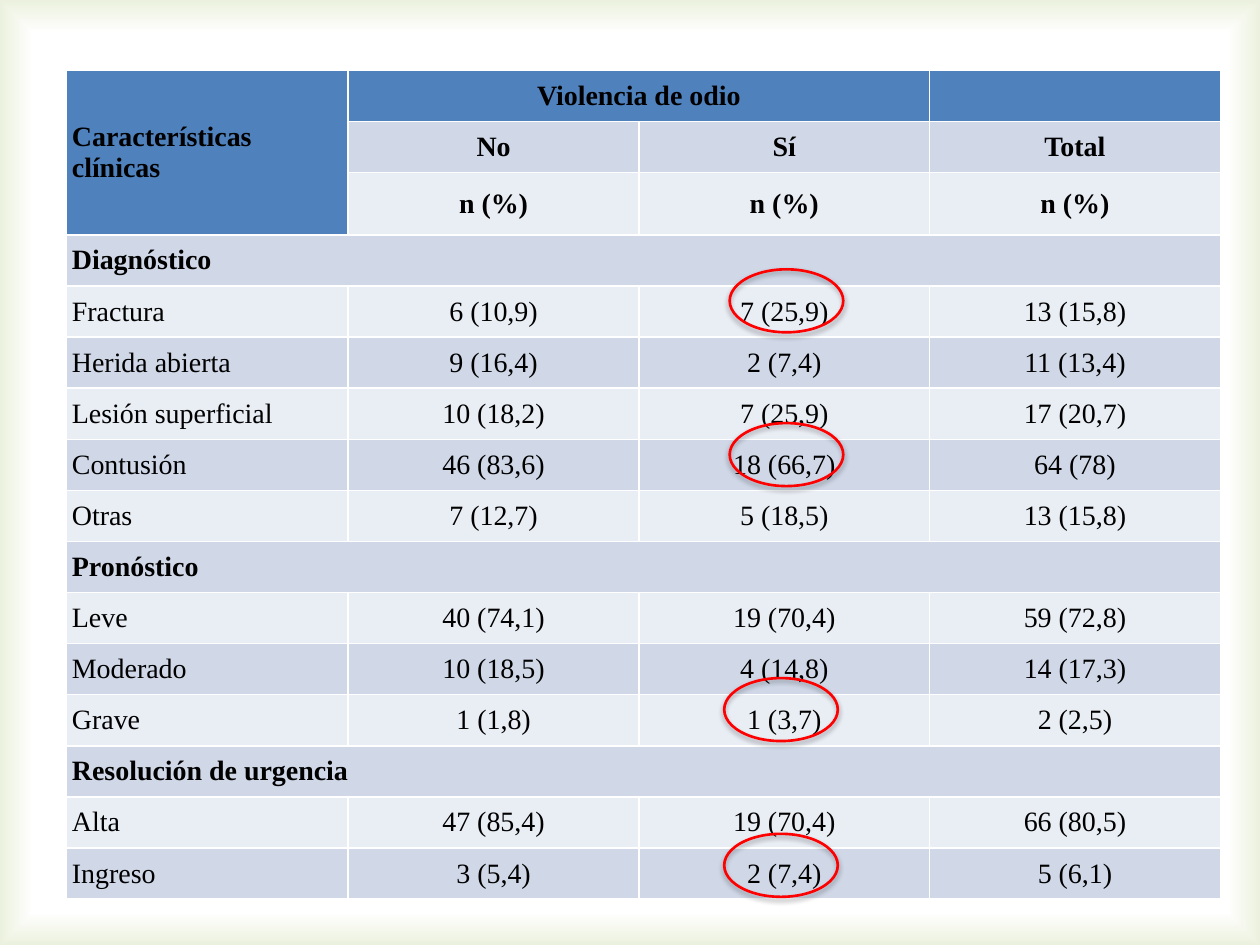
from dataclasses import dataclass

from lxml import etree
from pptx import Presentation
from pptx.dml.color import RGBColor
from pptx.enum import shapes, text
from pptx.oxml import parse_xml
from pptx.oxml.ns import nsdecls, qn
from pptx.util import Cm, Pt


@dataclass(frozen=True)
class Theme:
    font: str = "Times New Roman"
    size: int = 16
    ink: str = "000000"
    header: str = "4F81BD"
    band_dark: str = "D0D8E8"
    band_light: str = "E9EDF4"
    mark: str = "FF0000"
    mark_width: float = 1.5
    page_center: str = "FFFFFF"
    page_edge: str = "EBF1DE"


THEME = Theme()

HEADER_ROWS = 3
ROWS = [
    ("Características clínicas", "Violencia de odio", "", ""),
    ("", "No", "Sí", "Total"),
    ("", "n (%)", "n (%)", "n (%)"),
    ("Diagnóstico",),
    ("Fractura", "6 (10,9)", "7 (25,9)", "13 (15,8)"),
    ("Herida abierta", "9 (16,4)", "2 (7,4)", "11 (13,4)"),
    ("Lesión superficial", "10 (18,2)", "7 (25,9)", "17 (20,7)"),
    ("Contusión", "46 (83,6)", "18 (66,7)", "64 (78)"),
    ("Otras", "7 (12,7)", "5 (18,5)", "13 (15,8)"),
    ("Pronóstico",),
    ("Leve", "40 (74,1)", "19 (70,4)", "59 (72,8)"),
    ("Moderado", "10 (18,5)", "4 (14,8)", "14 (17,3)"),
    ("Grave", "1 (1,8)", "1 (3,7)", "2 (2,5)"),
    ("Resolución de urgencia",),
    ("Alta", "47 (85,4)", "19 (70,4)", "66 (80,5)"),
    ("Ingreso", "3 (5,4)", "2 (7,4)", "5 (6,1)"),
]
COLUMN_WIDTHS = [5.69, 5.86, 5.86, 5.86]
ROW_HEIGHT = 1.03

# Offsets of the highlight ellipses from the table's top left corner, in cm
MARKS = [(13.38, 7.11), (13.38, 4.01), (13.27, 12.25), (13.27, 15.39)]
MARK_SIZE = (2.29, 1.27)


def paint_background(page):
    """White page whose edges fade to pale green."""
    page.background.fill.gradient()
    gradient = page.background._cSld.find(".//" + qn("a:gradFill"))
    gradient.getparent().replace(gradient, parse_xml(
        f'<a:gradFill {nsdecls("a")} rotWithShape="1"><a:gsLst>'
        f'<a:gs pos="93000"><a:srgbClr val="{THEME.page_center}">'
        '<a:alpha val="70000"/></a:srgbClr></a:gs>'
        f'<a:gs pos="100000"><a:srgbClr val="{THEME.page_edge}"/></a:gs>'
        '</a:gsLst><a:path path="rect"><a:fillToRect l="50000" t="50000" '
        'r="50000" b="50000"/></a:path></a:gradFill>'))


def fill_cell(cell, words, color, bold, centered):
    cell.fill.solid()
    cell.fill.fore_color.rgb = RGBColor.from_string(color)
    cell.vertical_anchor = text.MSO_ANCHOR.MIDDLE
    cell.margin_left = cell.margin_right = Cm(0.12)
    cell.margin_top = cell.margin_bottom = 0
    cell.text = words
    para = cell.text_frame.paragraphs[0]
    para.alignment = text.PP_ALIGN.CENTER if centered else text.PP_ALIGN.LEFT
    para.font.name = THEME.font
    para.font.size = Pt(THEME.size)
    para.font.bold = bold
    para.font.color.rgb = RGBColor.from_string(THEME.ink)


def add_clinical_table(page, left, top):
    frame = page.shapes.add_table(
        len(ROWS), len(COLUMN_WIDTHS), Cm(left), Cm(top),
        Cm(sum(COLUMN_WIDTHS)), Cm(ROW_HEIGHT * len(ROWS)))
    table = frame.table
    for column, width in zip(table.columns, COLUMN_WIDTHS):
        column.width = Cm(width)

    for r, values in enumerate(ROWS):
        table.rows[r].height = Cm(ROW_HEIGHT)
        is_section = len(values) == 1
        band = THEME.band_dark if r % 2 else THEME.band_light
        for c in range(len(COLUMN_WIDTHS)):
            is_header = r == 0 or (c == 0 and r < HEADER_ROWS)
            fill_cell(table.cell(r, c), values[c] if c < len(values) else "",
                      THEME.header if is_header else band,
                      bold=r < HEADER_ROWS or is_section, centered=c > 0)
        if is_section:
            table.cell(r, 0).merge(table.cell(r, len(COLUMN_WIDTHS) - 1))

    table.cell(0, 0).merge(table.cell(HEADER_ROWS - 1, 0))
    table.cell(0, 1).merge(table.cell(0, 2))


def add_mark(page, left, top, width, height):
    """Red outlined ellipse with a soft shadow below it."""
    mark = page.shapes.add_shape(shapes.MSO_SHAPE.OVAL, Cm(left), Cm(top),
                                 Cm(width), Cm(height))
    mark.fill.background()
    mark.line.color.rgb = RGBColor.from_string(THEME.mark)
    mark.line.width = Pt(THEME.mark_width)
    mark.shadow.inherit = False
    effects = mark._element.spPr.find(qn("a:effectLst"))
    shadow = etree.SubElement(
        effects, qn("a:outerShdw"), blurRad=str(Pt(3.1)), dist=str(Pt(1.8)),
        dir="5400000", rotWithShape="0")
    color = etree.SubElement(shadow, qn("a:srgbClr"), val="000000")
    etree.SubElement(color, qn("a:alpha"), val="35000")


def build_results_page(page, left, top):
    paint_background(page)
    add_clinical_table(page, left, top)
    for dx, dy in MARKS:
        add_mark(page, left + dx, top + dy, *MARK_SIZE)


def main():
    deck = Presentation()
    deck.slide_width, deck.slide_height = Cm(25.4), Cm(19.05)
    page = deck.slides.add_slide(deck.slide_layouts[6])
    build_results_page(page, left=1.33, top=1.42)
    deck.save("out.pptx")


if __name__ == "__main__":
    main()
